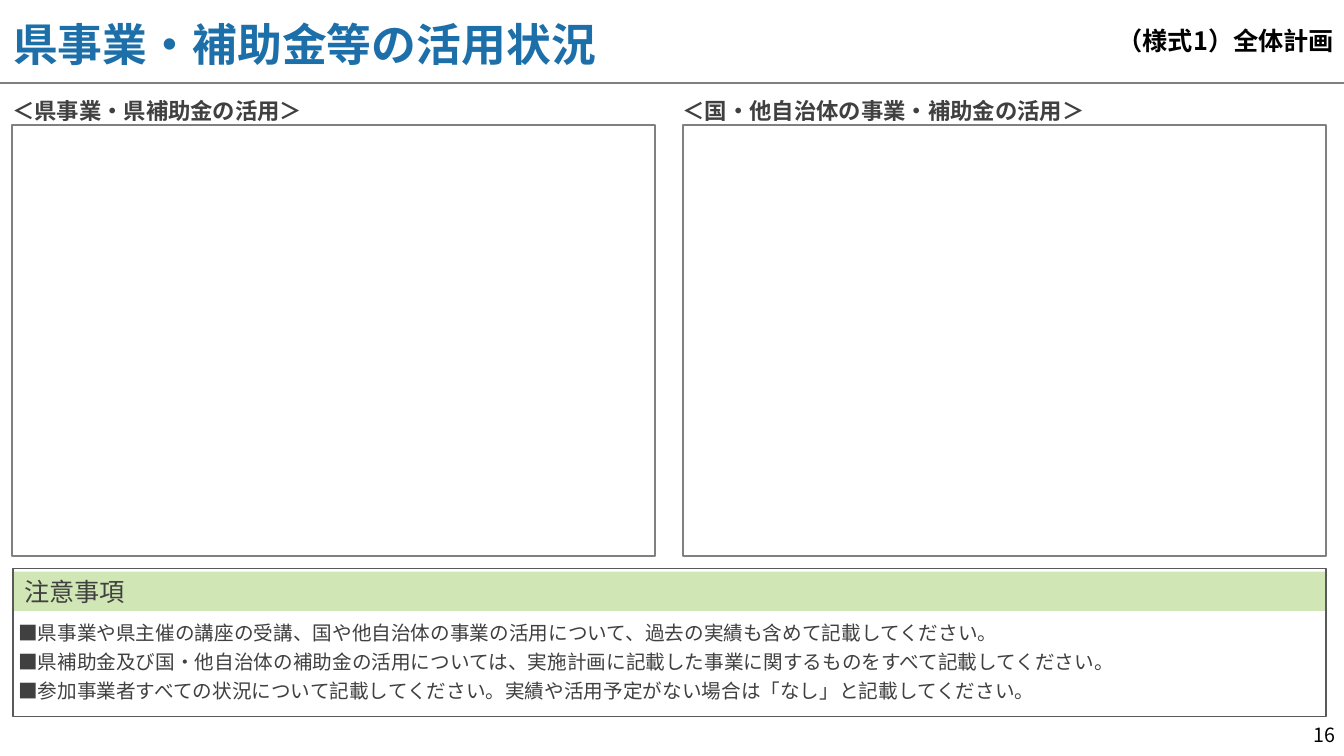
from lxml.etree import SubElement
from pptx import Presentation
from pptx.dml.color import RGBColor
from pptx.enum.shapes import MSO_CONNECTOR, MSO_SHAPE
from pptx.enum.text import MSO_ANCHOR, MSO_AUTO_SIZE, PP_ALIGN
from pptx.oxml.ns import qn
from pptx.util import Pt

PX = 9144  # EMU, 100 px to the inch
FONT = "Noto Sans CJK JP"
COLORS = {
    "title": "1D6FA9",
    "black": "000000",
    "body": "404040",
    "frame": "808080",
    "notes_frame": "595959",
    "notes_band": "D1E6B5",
}
PANEL_WIDTH = 638
PANELS = [
    (12, "＜県事業・県補助金の活用＞"),
    (677, "＜国・他自治体の事業・補助金の活用＞"),
]
NOTES = [
    "■県事業や県主催の講座の受講、国や他自治体の事業の活用について、過去の実績も含めて記載してください。",
    "■県補助金及び国・他自治体の補助金の活用については、実施計画に記載した事業に関するものをすべて記載してください。",
    "■参加事業者すべての状況について記載してください。実績や活用予定がない場合は「なし」と記載してください。",
]


def color(name):
    return RGBColor.from_string(COLORS[name])


def emu(*lengths):
    return [length * PX for length in lengths]


def write(frame, lines, size, ink, bold=False, align=PP_ALIGN.LEFT,
          anchor=MSO_ANCHOR.TOP, insets=(10, 5, 10, 5)):
    frame.word_wrap = True
    frame.auto_size = MSO_AUTO_SIZE.NONE
    frame.vertical_anchor = anchor
    (frame.margin_left, frame.margin_top,
     frame.margin_right, frame.margin_bottom) = emu(*insets)
    frame.text = "\n".join(lines)
    for paragraph in frame.paragraphs:
        paragraph.alignment = align
        for run in paragraph.runs:
            run.font.name = FONT
            run.font.size = Pt(size)
            run.font.bold = bold
            run.font.color.rgb = color(ink)
            SubElement(run.font._element, qn("a:ea"), typeface=FONT)


def add_label(slide, box, lines, size, ink, **style):
    frame = slide.shapes.add_textbox(*emu(*box)).text_frame
    write(frame, lines, size, ink, **style)
    return frame


def add_box(slide, box, fill=None, line=None, width=1):
    rectangle = slide.shapes.add_shape(MSO_SHAPE.RECTANGLE, *emu(*box))
    rectangle.shadow.inherit = False
    if fill:
        rectangle.fill.solid()
        rectangle.fill.fore_color.rgb = color(fill)
    else:
        rectangle.fill.background()
    if line:
        rectangle.line.color.rgb = color(line)
        rectangle.line.width = Pt(width)
    else:
        rectangle.line.fill.background()
    return rectangle


def add_header(slide):
    rule = slide.shapes.add_connector(
        MSO_CONNECTOR.STRAIGHT, *emu(0, 82, 1333, 82))
    rule.line.color.rgb = color("frame")
    rule.line.width = Pt(1.5)
    SubElement(rule._element.spPr, qn("a:effectLst"))

    title = slide.shapes.title
    title.left, title.top, title.width, title.height = emu(3, 3, 1059, 80)
    write(title.text_frame, ["県事業・補助金等の活用状況"], 32, "title",
          bold=True, anchor=MSO_ANCHOR.MIDDLE)
    add_label(slide, (1023, 0, 310, 80), ["（様式1）全体計画"], 18, "black",
              bold=True, align=PP_ALIGN.RIGHT, anchor=MSO_ANCHOR.MIDDLE)


def add_panel(slide, left, heading):
    add_box(slide, (left, 124, PANEL_WIDTH, 428), line="frame", width=1.5)
    frame = add_label(slide, (left, 83, PANEL_WIDTH, 41), [heading], 16,
                      "body", bold=True, insets=(0, 0, 0, 0))
    frame.paragraphs[0].line_spacing = 1.5


def add_notes_section(slide):
    frame = add_label(slide, (18, 627, 1315, 71), NOTES, 14, "body",
                      insets=(0, 1, 0, 0))
    for index, paragraph in enumerate(frame.paragraphs):
        paragraph.line_spacing = Pt(8)
        paragraph.space_before = Pt(0.9 if index else 0)
        paragraph.space_after = Pt(12)
    band = add_box(slide, (14, 567, 1301, 39), fill="notes_band")
    write(band.text_frame, ["注意事項"], 18, "body", anchor=MSO_ANCHOR.MIDDLE)
    add_box(slide, (13, 564, 1302, 147), line="notes_frame")


def main():
    presentation = Presentation()
    presentation.slide_width, presentation.slide_height = emu(1333, 750)
    slide = presentation.slides.add_slide(presentation.slide_layouts[5])
    add_header(slide)
    for left, heading in PANELS:
        add_panel(slide, left, heading)
    add_notes_section(slide)
    add_label(slide, (1267, 712, 67, 38), ["16"], 14, "black",
              align=PP_ALIGN.RIGHT)
    presentation.save("out.pptx")


if __name__ == "__main__":
    main()
